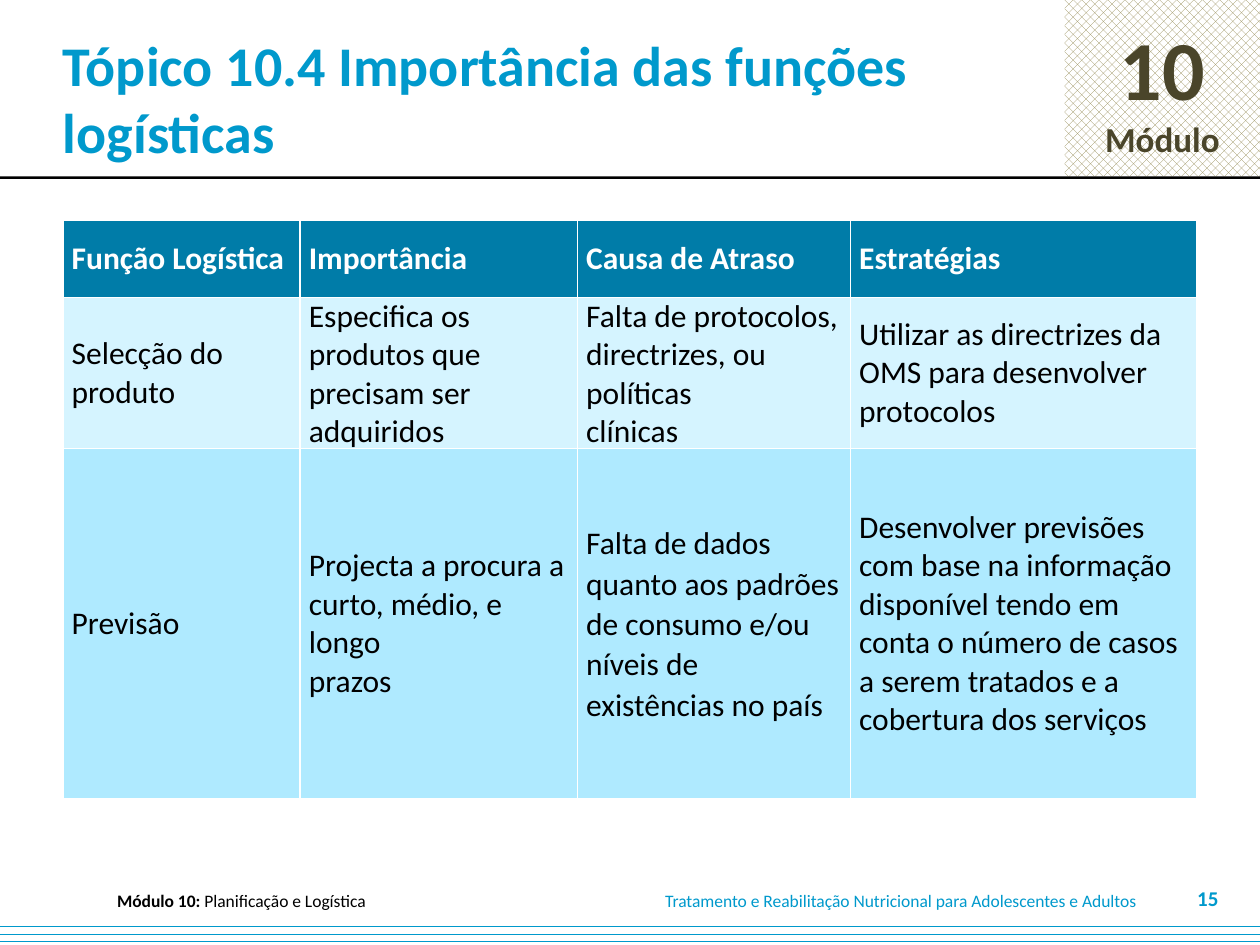
"""Build the slide on why logistics functions matter."""
import lxml.etree
import pptx
import pptx.dml.color
import pptx.enum.dml
import pptx.enum.shapes
import pptx.enum.text
import pptx.oxml.ns
import pptx.util

Pt = pptx.util.Pt
ALIGN = pptx.enum.text.PP_ALIGN
MIDDLE = pptx.enum.text.MSO_ANCHOR.MIDDLE
PATTERN = pptx.enum.dml.MSO_PATTERN
RGB = pptx.dml.color.RGBColor.from_string
HUES = {"blue": "0099CC", "head": "007CA8", "pale": "D5F4FF", "light": "AFEAFF",
        "sand": "948A54", "olive": "4A452A", "black": "000000", "white": "FFFFFF"}


def style(frame, size, hue, bold=False, align=ALIGN.LEFT):
    frame.word_wrap = True
    frame.vertical_anchor = MIDDLE
    for para in frame.paragraphs:
        para.alignment = align
        for run in para.runs:
            run.font.name = "Calibri"
            run.font.size = Pt(size)
            run.font.bold = bold
            run.font.color.rgb = RGB(HUES[hue])


def block(left, top, width, height, hue, pattern=None):
    shape = slide.shapes.add_shape(pptx.enum.shapes.MSO_SHAPE.RECTANGLE,
                                   Pt(left), Pt(top), Pt(width), Pt(height))
    shape.shadow.inherit = False
    shape.line.fill.background()
    if pattern is None:
        shape.fill.solid()
    else:
        shape.fill.patterned()
        shape.fill.pattern = pattern
        shape.fill.back_color.rgb = RGB(HUES["white"])
    shape.fill.fore_color.rgb = RGB(HUES[hue])
    return shape


deck = pptx.Presentation()
deck.slide_width, deck.slide_height = Pt(720), Pt(540)
slide = deck.slides.add_slide(deck.slide_layouts[6])

badge = block(608.4, 0, 111.6, 100.8, "sand", PATTERN.PERCENT_50)
badge.text_frame.text = "10\nMódulo"
style(badge.text_frame, 48, "olive", True, ALIGN.CENTER)
badge.text_frame.paragraphs[1].runs[0].font.size = Pt(20)
block(0, 100.8, 720, 1.4, "black")
block(0, 525, 720, 15, "blue", PATTERN.DASHED_HORIZONTAL)

labels = [
    ("Tópico 10.4 Importância das funções logísticas",
     (0, 0, 618, 111.6), 36, 32, "blue", True, ALIGN.LEFT),
    ("Tratamento e Reabilitação Nutricional para Adolescentes e Adultos",
     (373, 507.6, 291.6, 14.4), 7.2, 10, "blue", False, ALIGN.LEFT),
    ("Módulo 10: ",
     (59.8, 507.6, 311, 14.4), 7.2, 10, "black", True, ALIGN.LEFT),
    ("15", (667.4, 504, 36, 18), 7.2, 12, "blue", True, ALIGN.RIGHT),
]
for text, box, inset, size, hue, bold, align in labels:
    frame = slide.shapes.add_textbox(*map(Pt, box)).text_frame
    frame.margin_left = Pt(inset)
    frame.text = text
    if text.startswith("Módulo"):
        frame.paragraphs[0].add_run().text = "Planificação e Logística"
    style(frame, size, hue, bold, align)
    if text.startswith("Módulo"):
        frame.paragraphs[0].runs[1].font.bold = False

rows = [
    (44, "head", ["Função Logística", "Importância", "Causa de Atraso", "Estratégias"]),
    (86, "pale", [
        "Selecção do produto",
        "Especifica os produtos que precisam ser adquiridos",
        "Falta de protocolos, directrizes, ou políticas\nclínicas",
        "Utilizar as directrizes da OMS para desenvolver protocolos"]),
    (200, "light", [
        "Previsão",
        "Projecta a procura a\ncurto, médio, e longo\nprazos",
        "Falta de dados quanto aos padrões de consumo e/ou níveis de existências no país",
        "Desenvolver previsões com base na informação disponível tendo em conta "
        "o número de casos a serem tratados e a cobertura dos serviços"]),
]
widths = [135.5, 158.5, 156, 198]
table = slide.shapes.add_table(len(rows), len(widths), Pt(36), Pt(126),
                               Pt(sum(widths)), Pt(330)).table
for col, width in zip(table.columns, widths):
    col.width = Pt(width)
qn = pptx.oxml.ns.qn
for r, (height, hue, texts) in enumerate(rows):
    table.rows[r].height = Pt(height)
    for c, text in enumerate(texts):
        cell = table.cell(r, c)
        cell.text_frame.text = text
        style(cell.text_frame, 18, "black" if r else "white", r == 0)
        cell.vertical_anchor = MIDDLE
        cell.margin_left = cell.margin_right = Pt(5)
        cell.margin_top = cell.margin_bottom = 0
        props = cell._tc.get_or_add_tcPr()
        for side in ("lnL", "lnR", "lnT", "lnB"):
            edge = lxml.etree.SubElement(props, qn("a:" + side), w=str(Pt(1)))
            fill = lxml.etree.SubElement(edge, qn("a:solidFill"))
            lxml.etree.SubElement(fill, qn("a:srgbClr"), val=HUES["white"])
        cell.fill.solid()
        cell.fill.fore_color.rgb = RGB(HUES[hue])

cause = table.cell(2, 2).text_frame.paragraphs[0]
cause.line_spacing = 1.05
cause.space_after = Pt(10)

deck.save("out.pptx")
